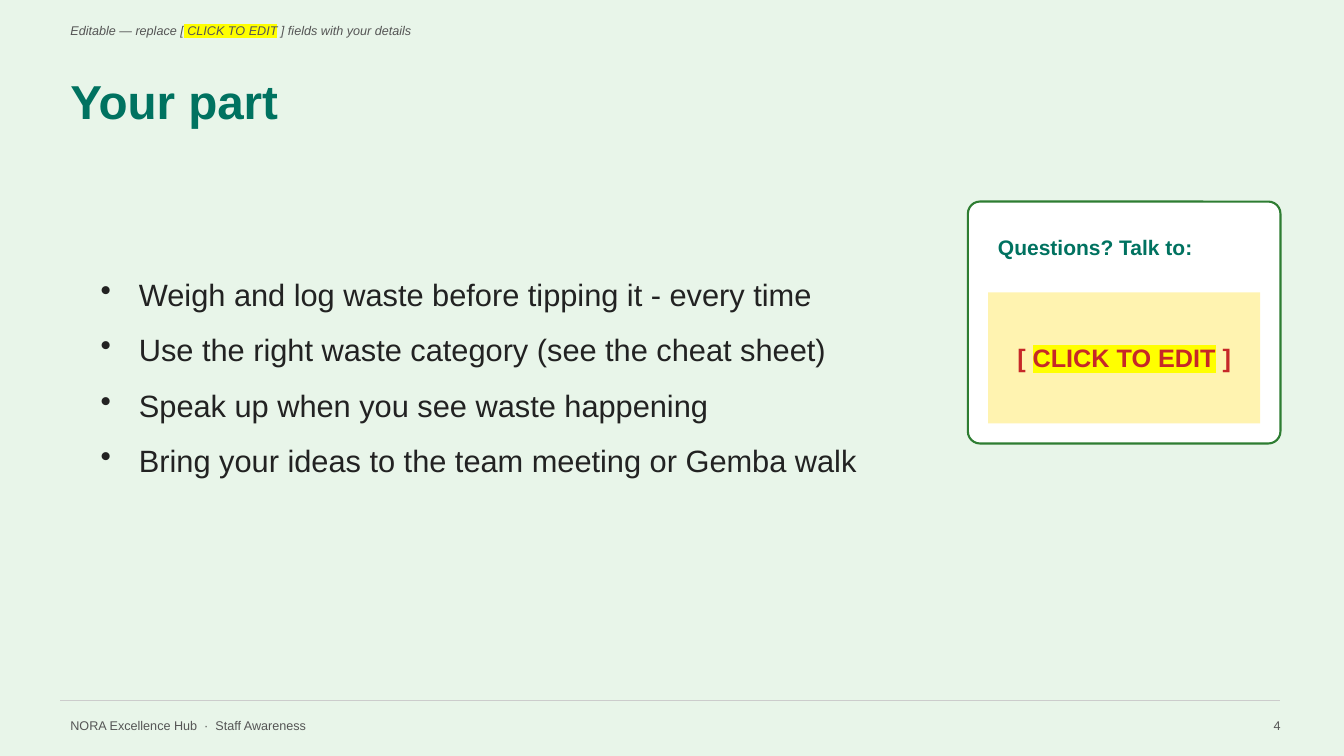
from lxml import etree
from pptx import Presentation
from pptx.dml.color import RGBColor
from pptx.enum.shapes import MSO_CONNECTOR as CONN, MSO_SHAPE as SHAPE
from pptx.enum.text import MSO_ANCHOR as ANCHOR, PP_ALIGN as ALIGN
from pptx.oxml.ns import qn
from pptx.util import Inches, Pt

GREEN, GREY, YELLOW = "007260", "555555", "FFFF00"
SMALL = {"size": Pt(9), "color": GREY}
DUTIES = [
    "Weigh and log waste before tipping it - every time",
    "Use the right waste category (see the cheat sheet)",
    "Speak up when you see waste happening",
    "Bring your ideas to the team meeting or Gemba walk",
]


def rgb(color):
    return RGBColor.from_string(color)


def add_run(p, text, fmt, highlight=None):
    r = p.add_run()
    r.text = text
    r.font.name = "Arial"
    for name, value in fmt.items():
        if name == "color":
            r.font.color.rgb = rgb(value)
        else:
            setattr(r.font, name, value)
    if highlight:
        mark = etree.Element(qn("a:highlight"))
        etree.SubElement(mark, qn("a:srgbClr"), val=highlight)
        r.font._element.find(qn("a:solidFill")).addnext(mark)


def write(sp, paragraphs, fmt, align=ALIGN.LEFT):
    """Fill a shape with paragraphs, each a list of (text, highlight) runs."""
    tf = sp.text_frame
    tf.word_wrap = True
    tf.vertical_anchor = ANCHOR.MIDDLE
    for i, runs in enumerate(paragraphs):
        p = tf.add_paragraph() if i else tf.paragraphs[0]
        p.alignment = align
        for text, highlight in runs:
            add_run(p, text, fmt, highlight)
    return tf


def add_text(slide, box, paragraphs, fmt, align=ALIGN.LEFT):
    sp = slide.shapes.add_textbox(*map(Inches, box))
    return write(sp, paragraphs, fmt, align)


def add_panel(slide, kind, box, fill):
    sp = slide.shapes.add_shape(kind, *map(Inches, box))
    sp.shadow.inherit = False
    sp.fill.solid()
    sp.fill.fore_color.rgb = rgb(fill)
    sp.line.fill.background()
    return sp


def add_header(slide, x, y, w):
    hint = [("Editable — replace [", None), (" CLICK TO EDIT", YELLOW),
            (" ] fields with your details", None)]
    add_text(slide, (x, y, 8, 0.3), [hint], {**SMALL, "italic": True})
    add_text(slide, (x, y + 0.45, w, 0.8), [[("Your part", None)]],
             {"size": Pt(34), "color": GREEN, "bold": True})


def add_duties(slide, box):
    tf = add_text(slide, box, [[(duty, None)] for duty in DUTIES],
                  {"size": Pt(22), "color": "222222"})
    for p in tf.paragraphs:
        p.line_spacing = 1.5
        pPr = p._p.get_or_add_pPr()
        pPr.set("marL", str(Inches(0.38)))
        pPr.set("indent", str(-Inches(0.38)))
        etree.SubElement(pPr, qn("a:buChar"), char="•")


def add_contact_card(slide, x, y, w, h, pad=0.2):
    card = add_panel(slide, SHAPE.ROUNDED_RECTANGLE, (x, y, w, h), "FFFFFF")
    card.adjustments[0] = 0.05
    card.line.color.rgb = rgb("2E7D32")
    card.line.width = Pt(1.5)
    left, inner_w = x + pad, w - 2 * pad
    add_text(slide, (left, y + pad, inner_w, 0.5),
             [[("Questions? Talk to:", None)]],
             {"size": Pt(15), "color": GREEN, "bold": True})
    field = add_panel(slide, SHAPE.RECTANGLE,
                      (left, y + 0.9, inner_w, h - 0.9 - pad), "FFF3B0")
    write(field, [[("[ ", None), ("CLICK TO EDIT", YELLOW), (" ]", None)]],
          {"size": Pt(18), "color": "C62828", "bold": True}, ALIGN.CENTER)


def add_footer(slide, x, y, w, number):
    rule = slide.shapes.add_connector(
        CONN.STRAIGHT, Inches(x), Inches(y), Inches(x + w), Inches(y))
    rule.line.color.rgb = rgb("CCCCCC")
    rule.line.width = Pt(1)
    etree.SubElement(rule._element.spPr, qn("a:effectLst"))
    top = y + 0.05
    add_text(slide, (x, top, 8, 0.4),
             [[("NORA Excellence Hub  ·  Staff Awareness", None)]], SMALL)
    add_text(slide, (x + w - 0.4, top, 0.5, 0.4), [[(number, None)]],
             SMALL, ALIGN.RIGHT)


def main():
    prs = Presentation()
    prs.slide_width, prs.slide_height = Inches(13.33), Inches(7.5)
    slide = prs.slides.add_slide(prs.slide_layouts[6])
    slide.background.fill.solid()
    slide.background.fill.fore_color.rgb = rgb("E8F5E9")
    add_header(slide, 0.6, 0.15, 12.1)
    add_duties(slide, (0.9, 1.9, 8.5, 3.5))
    add_contact_card(slide, 9.6, 2, 3.1, 2.4)
    add_footer(slide, 0.6, 6.95, 12.1, "4")
    prs.save("out.pptx")


if __name__ == "__main__":
    main()
